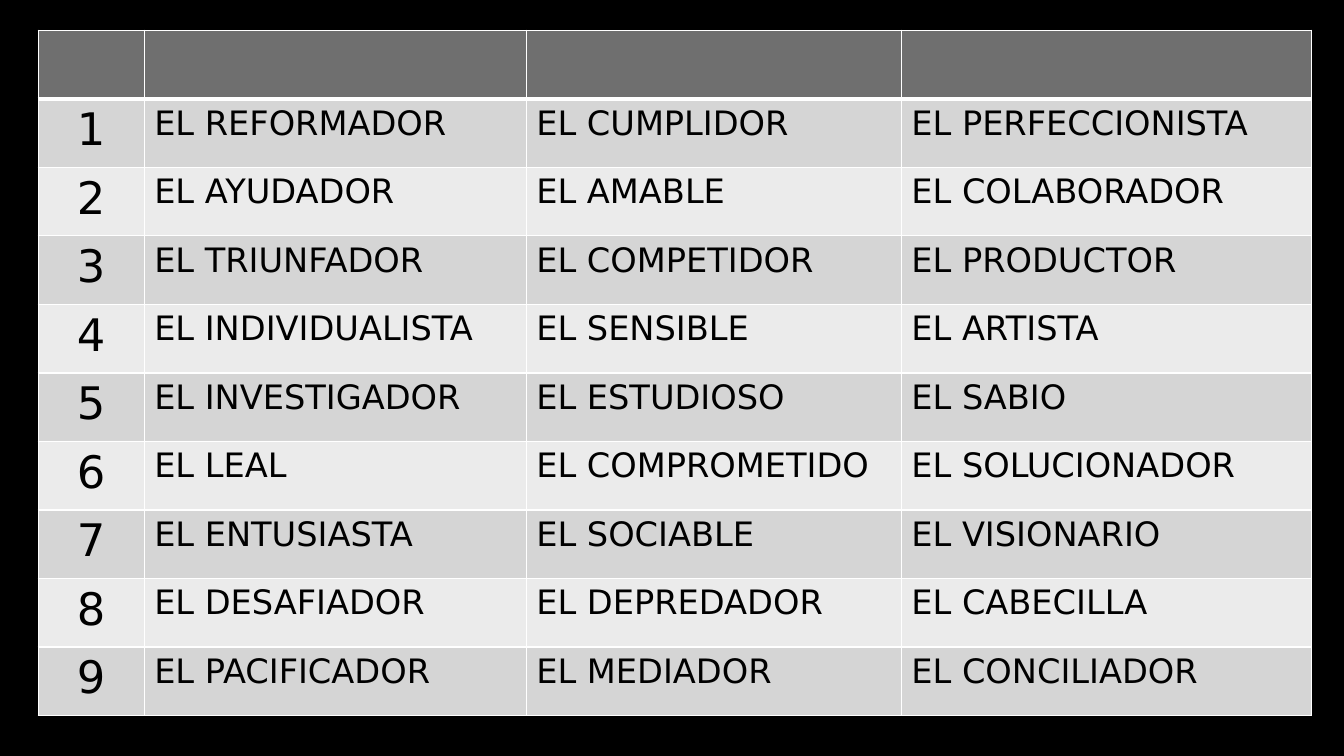
"""Build a slide with a table of the nine types and their names."""
import pptx
import pptx.dml.color
import pptx.enum.text
import pptx.oxml
import pptx.oxml.ns
import pptx.util

Inches = pptx.util.Inches
ALIGN = pptx.enum.text.PP_ALIGN

COLS = [1.05, 3.79, 3.72, 4.07]
ROW = 0.68
TYPES = [
    ("EL REFORMADOR", "EL CUMPLIDOR", "EL PERFECCIONISTA"),
    ("EL AYUDADOR", "EL AMABLE", "EL COLABORADOR"),
    ("EL TRIUNFADOR", "EL COMPETIDOR", "EL PRODUCTOR"),
    ("EL INDIVIDUALISTA", "EL SENSIBLE", "EL ARTISTA"),
    ("EL INVESTIGADOR", "EL ESTUDIOSO", "EL SABIO"),
    ("EL LEAL", "EL COMPROMETIDO", "EL SOLUCIONADOR"),
    ("EL ENTUSIASTA", "EL SOCIABLE", "EL VISIONARIO"),
    ("EL DESAFIADOR", "EL DEPREDADOR", "EL CABECILLA"),
    ("EL PACIFICADOR", "EL MEDIADOR", "EL CONCILIADOR"),
]


def color(code):
    return pptx.dml.color.RGBColor.from_string(code)


class Deck:
    font = "DejaVu Sans"
    ink = "000000"
    line = "FFFFFF"
    head = "6F6F6F"
    bands = ("D5D5D5", "EBEBEB")

    def __init__(self, show):
        self.slide = show.slides.add_slide(show.slide_layouts[6])

    def paint(self, item, code):
        item.fill.solid()
        item.fill.fore_color.rgb = color(code)

    def edge(self, cell, side, width):
        cell._tc.get_or_add_tcPr().append(pptx.oxml.parse_xml(
            f'<a:ln{side} {pptx.oxml.ns.nsdecls("a")} w="{pptx.util.Pt(width)}">'
            f'<a:solidFill><a:srgbClr val="{self.line}"/></a:solidFill></a:ln{side}>'))

    def cell(self, cell, fill, base=1):
        for side in "LRTB":
            self.edge(cell, side, base if side == "B" else 1)
        self.paint(cell, fill)

    def text(self, cell, words, size, align):
        para = cell.text_frame.paragraphs[0]
        para.alignment = align
        run = para.add_run()
        run.text = words
        style = {"name": self.font, "size": pptx.util.Pt(size)}
        for key, value in style.items():
            setattr(run.font, key, value)
        run.font.color.rgb = color(self.ink)

    def table(self, left, top, cols, high, rows):
        count = len(rows) + 1
        grid = self.slide.shapes.add_table(
            count, len(cols), Inches(left), Inches(top),
            Inches(sum(cols)), Inches(high * count)).table
        for col, width in zip(grid.columns, cols):
            col.width = Inches(width)
        for cell in grid.rows[0].cells:
            self.cell(cell, self.head, 3)
        for num, names in enumerate(rows, 1):
            cells = list(grid.rows[num].cells)
            for cell in cells:
                self.cell(cell, self.bands[(num - 1) % 2])
            self.text(cells[0], str(num), 32, ALIGN.CENTER)
            for cell, name in zip(cells[1:], names):
                self.text(cell, name, 24, ALIGN.LEFT)


def main():
    show = pptx.Presentation()
    show.slide_width = Inches(13.33)
    show.slide_height = Inches(7.5)
    deck = Deck(show)
    deck.paint(deck.slide.background, "000000")
    deck.table(0.38, 0.3, COLS, ROW, TYPES)
    show.save("out.pptx")


if __name__ == "__main__":
    main()
